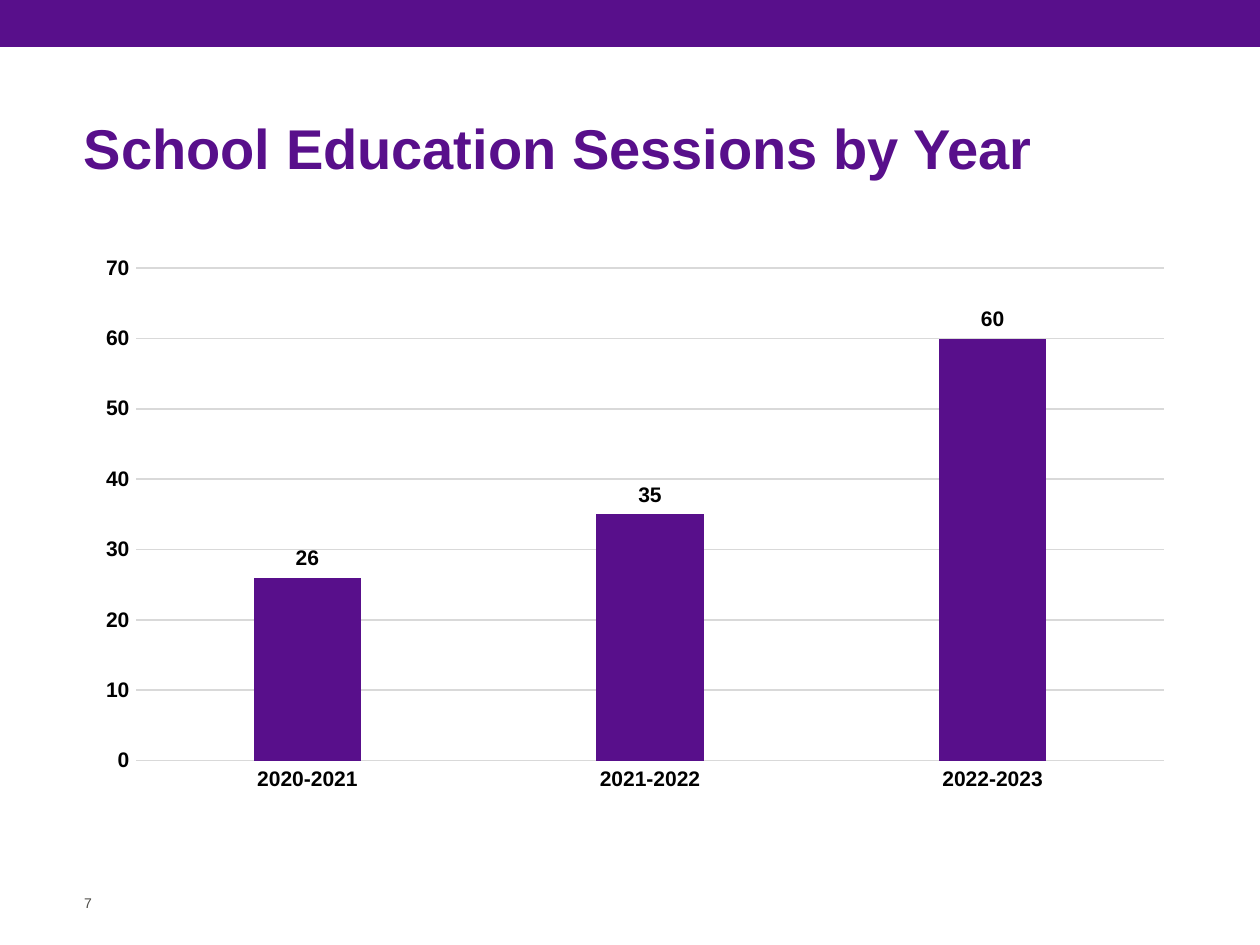
from pptx import Presentation
from pptx.chart.data import CategoryChartData
from pptx.dml.color import RGBColor
from pptx.enum.chart import XL_CHART_TYPE, XL_LABEL_POSITION, XL_TICK_MARK
from pptx.enum.shapes import MSO_SHAPE
from pptx.enum.text import MSO_ANCHOR
from pptx.util import Emu, Pt

HUES = {"purple": "580F8B", "gray": "4D4C47", "black": "000000", "rule": "D9D9D9"}
FACE = "Arial"


def px(*nums):
    """Turn pixel lengths into EMU."""
    return [Emu(round(num * 914400 / 168)) for num in nums]


def hue(name):
    """Give the named colour."""
    return RGBColor.from_string(HUES[name])


def style(font, size, name, bold=False):
    """Set face, size, colour and weight of a font."""
    font.name, font.size, font.bold = FACE, Pt(size), bold
    font.color.rgb = hue(name)


def rule(line):
    """Draw a thin gray chart line."""
    line.color.rgb = hue("rule")
    line.width = Pt(0.75)


def add_bar(slide, box, name):
    """Add a plain filled band."""
    bar = slide.shapes.add_shape(MSO_SHAPE.RECTANGLE, *px(*box))
    bar.shadow.inherit = False
    bar.fill.solid()
    bar.fill.fore_color.rgb = hue(name)
    bar.line.fill.background()


def add_text(slide, box, text, size, name, bold=False):
    """Add one line of text in a box without margins."""
    frame = slide.shapes.add_textbox(*px(*box)).text_frame
    frame.word_wrap = True
    frame.vertical_anchor = MSO_ANCHOR.MIDDLE
    frame.margin_left = frame.margin_right = 0
    frame.margin_top = frame.margin_bottom = 0
    run = frame.paragraphs[0].add_run()
    run.text = text
    style(run.font, size, name, bold)


def add_chart(slide, box, cats, vals):
    """Add the column chart with value labels."""
    data = CategoryChartData()
    data.categories = cats
    data.add_series("Series 1", vals)
    kind = XL_CHART_TYPE.COLUMN_CLUSTERED
    chart = slide.shapes.add_chart(kind, *px(*box), data).chart
    chart.has_legend = chart.has_title = False
    style(chart.font, 10, "black")

    for axis in (chart.category_axis, chart.value_axis):
        axis.major_tick_mark = axis.minor_tick_mark = XL_TICK_MARK.NONE
        style(axis.tick_labels.font, 9, "black", True)
    rule(chart.category_axis.format.line)
    axis = chart.value_axis
    axis.minimum_scale, axis.maximum_scale, axis.major_unit = 0, 70, 10
    axis.format.line.fill.background()
    axis.has_major_gridlines = True
    rule(axis.major_gridlines.format.line)

    plot = chart.plots[0]
    plot.vary_by_categories = False
    plot.gap_width, plot.overlap = 219, -27
    bars = plot.series[0]
    bars.format.fill.solid()
    bars.format.fill.fore_color.rgb = hue("purple")
    tags = bars.data_labels
    tags.show_value = True
    tags.position = XL_LABEL_POSITION.OUTSIDE_END
    style(tags.font, 9, "black", True)


def main():
    """Build and save the slide."""
    deck = Presentation()
    deck.slide_width, deck.slide_height = px(1260, 945)
    slide = deck.slides.add_slide(deck.slide_layouts[6])
    add_bar(slide, (0, 0, 1260, 47), "purple")
    title = "School Education Sessions by Year"
    add_text(slide, (84, 115, 1092, 64), title, 24, "purple", True)
    add_text(slide, (84, 894, 35, 17), "7", 6, "gray")
    cats = ("2020-2021", "2021-2022", "2022-2023")
    add_chart(slide, (84, 245, 1102, 558), cats, (26, 35, 60))
    deck.save("out.pptx")


if __name__ == "__main__":
    main()
